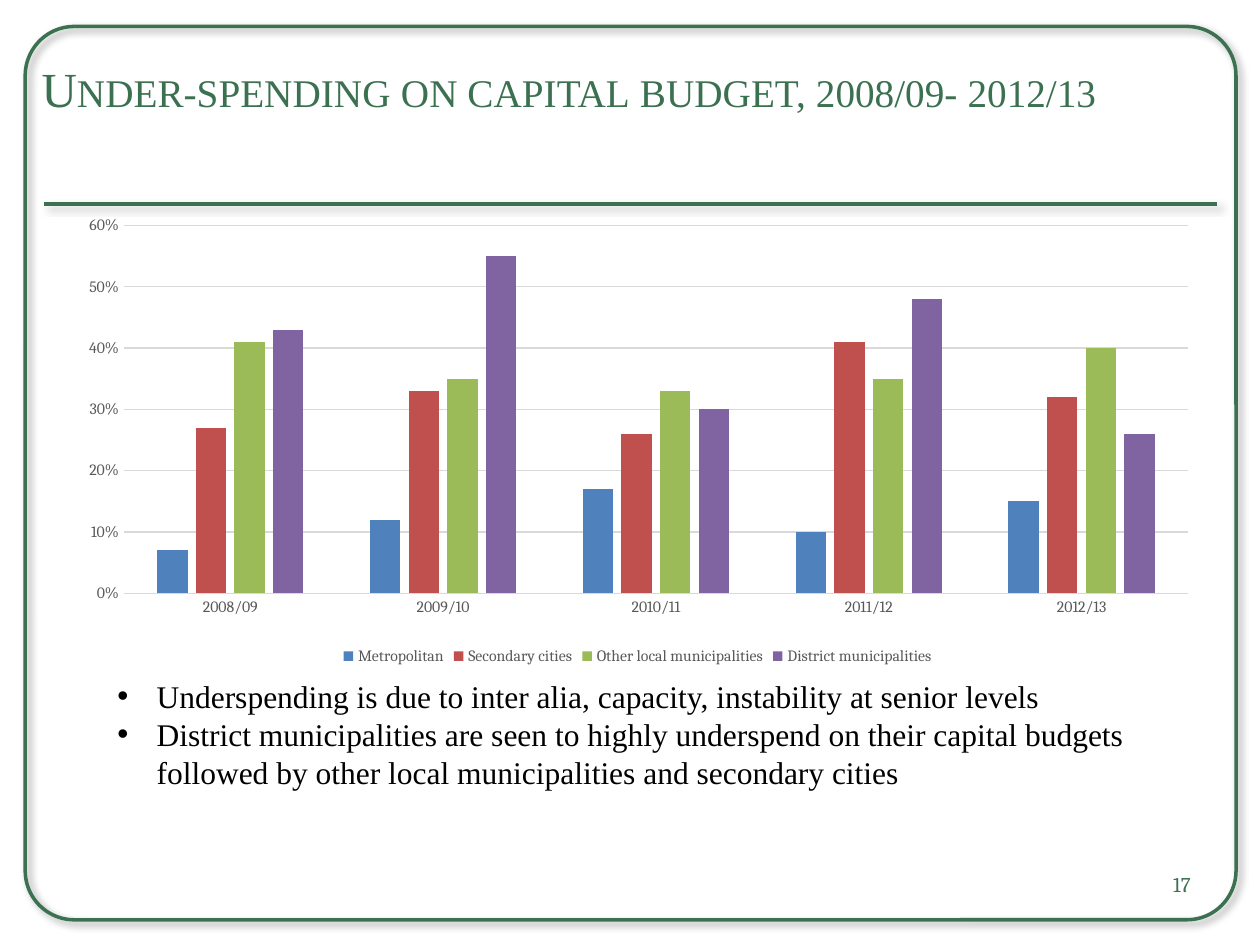
from dataclasses import dataclass

from lxml.etree import SubElement
from pptx import Presentation
from pptx.chart.data import CategoryChartData
from pptx.dml.color import RGBColor
from pptx.enum.chart import XL_CHART_TYPE as ChartType, XL_LEGEND_POSITION as LegendPosition
from pptx.enum.chart import XL_TICK_MARK as TickMark
from pptx.enum.shapes import MSO_CONNECTOR as Connector, MSO_SHAPE as Shape
from pptx.enum.text import MSO_ANCHOR as Anchor, MSO_AUTO_SIZE as AutoSize, PP_ALIGN as Align
from pptx.oxml import parse_xml
from pptx.oxml.ns import nsdecls, qn
from pptx.util import Pt


@dataclass(frozen=True)
class Theme:
    """Colours, fonts and type sizes of the slide."""
    green: str = "3B7150"
    ink: str = "000000"
    grey: str = "595959"
    grid: str = "D9D9D9"
    series: tuple = ("4F81BD", "C0504D", "9BBB59", "8064A2")
    serif: str = "Times New Roman"
    chart_font: str = "Cambria"
    title_size: float = 28
    body_size: float = 18
    body_leading: float = 21.7
    number_size: float = 12
    label_size: float = 9
    chart_size: float = 10
    frame_line: float = 2
    chart_line: float = 0.75


THEME = Theme()
CATEGORIES = ("2008/09", "2009/10", "2010/11", "2011/12", "2012/13")
UNDERSPENDING = {
    "Metropolitan": (0.07, 0.12, 0.17, 0.1, 0.15),
    "Secondary cities": (0.27, 0.33, 0.26, 0.41, 0.32),
    "Other local municipalities": (0.41, 0.35, 0.33, 0.35, 0.4),
    "District municipalities": (0.43, 0.55, 0.3, 0.48, 0.26),
}
BULLETS = (
    "Underspending is due to inter alia, capacity, instability at senior levels",
    "District municipalities are seen to highly underspend on their capital budgets "
    "followed by other local municipalities and secondary cities",
)


def place(shape, box):
    """Move a shape to a box of left, top, width and height in points."""
    shape.left, shape.top, shape.width, shape.height = map(Pt, box)


def style_font(font, name, size, color):
    """Set the typeface, size and colour of a font."""
    font.name, font.size = name, Pt(size)
    font.color.rgb = RGBColor.from_string(color)


def style_line(line, color, width):
    """Set the colour and width of a line."""
    line.color.rgb = RGBColor.from_string(color)
    line.width = Pt(width)


def add_shadow(shape):
    """Give a shape a soft shadow to the lower right."""
    shape._element.spPr.append(parse_xml(
        f'<a:effectLst {nsdecls("a")}><a:outerShdw blurRad="{Pt(4)}" dist="{Pt(3)}" '
        f'dir="2700000" algn="tl" rotWithShape="0"><a:srgbClr val="{THEME.ink}">'
        '<a:alpha val="40000"/></a:srgbClr></a:outerShdw></a:effectLst>'))


def add_frame(slide, box, rule_top, rule_inset):
    """Draw the rounded border and the rule under the title."""
    left, top, width, height = box
    border = slide.shapes.add_shape(Shape.ROUNDED_RECTANGLE, *map(Pt, box))
    border.adjustments[0] = 0.055
    border.fill.background()
    rule = slide.shapes.add_connector(
        Connector.STRAIGHT, Pt(left + rule_inset), Pt(rule_top),
        Pt(left + width - rule_inset), Pt(rule_top))
    for shape in (border, rule):
        style_line(shape.line, THEME.green, THEME.frame_line)
        add_shadow(shape)


def fill_title(slide, box, text):
    """Write the title in small capitals near the top of its box."""
    title = slide.shapes.title
    place(title, box)
    frame = title.text_frame
    frame.auto_size, frame.word_wrap = AutoSize.NONE, True
    frame.vertical_anchor = Anchor.TOP
    frame.margin_left = frame.margin_right = Pt(3.6)
    frame.margin_top = Pt(12.6)
    paragraph = frame.paragraphs[0]
    paragraph.alignment = Align.LEFT
    run = paragraph.add_run()
    run.text = text
    style_font(run.font, THEME.serif, THEME.title_size, THEME.green)
    run.font._element.set("cap", "small")


def fill_body(slide, box, lines):
    """Write the bullet list in the body placeholder."""
    body = slide.placeholders[1]
    place(body, box)
    frame = body.text_frame
    frame.auto_size, frame.word_wrap = AutoSize.NONE, True
    for index, line in enumerate(lines):
        paragraph = frame.add_paragraph() if index else frame.paragraphs[0]
        properties = paragraph._element.get_or_add_pPr()
        properties.set("marL", str(Pt(22.5)))
        properties.set("indent", str(Pt(-22.5)))
        SubElement(properties, qn("a:buFont"), typeface="Arial")
        SubElement(properties, qn("a:buChar"), char="•")
        paragraph.space_before = Pt(0)
        paragraph.line_spacing = Pt(THEME.body_leading)
        run = paragraph.add_run()
        run.text = line
        style_font(run.font, THEME.serif, THEME.body_size, THEME.ink)


def add_spending_chart(slide, box):
    """Add the clustered columns of under-spending by municipality type."""
    data = CategoryChartData(number_format="0%")
    data.categories = CATEGORIES
    for name, values in UNDERSPENDING.items():
        data.add_series(name, values)
    chart = slide.shapes.add_chart(ChartType.COLUMN_CLUSTERED, *map(Pt, box), data).chart
    style_font(chart.font, THEME.chart_font, THEME.chart_size, THEME.ink)
    chart.has_title = False
    chart.has_legend = True
    chart.legend.position = LegendPosition.BOTTOM
    chart.legend.include_in_layout = False
    style_font(chart.legend.font, THEME.chart_font, THEME.label_size, THEME.grey)

    plot = chart.plots[0]
    plot.gap_width, plot.overlap, plot.vary_by_categories = 219, -27, False
    for series, color in zip(plot.series, THEME.series):
        series.format.fill.solid()
        series.format.fill.fore_color.rgb = RGBColor.from_string(color)

    category_axis, value_axis = chart.category_axis, chart.value_axis
    for axis in (category_axis, value_axis):
        axis.major_tick_mark = axis.minor_tick_mark = TickMark.NONE
        style_font(axis.tick_labels.font, THEME.chart_font, THEME.label_size, THEME.grey)
    style_line(category_axis.format.line, THEME.grid, THEME.chart_line)
    value_axis.format.line.fill.background()
    value_axis.minimum_scale, value_axis.maximum_scale, value_axis.major_unit = 0, 0.6, 0.1
    value_axis.tick_labels.number_format = "0%"
    value_axis.tick_labels.number_format_is_linked = False
    value_axis.has_major_gridlines = True
    style_line(value_axis.major_gridlines.format.line, THEME.grid, THEME.chart_line)
    set_plot_area(chart, x=0.056, y=0.041, w=0.92, h=0.793)


def set_plot_area(chart, **fractions):
    """Fix the inner plot area as fractions of the chart."""
    area = chart._chartSpace.chart.plotArea
    for layout in area.findall(qn("c:layout")):
        area.remove(layout)
    modes = "".join(f'<c:{key}Mode val="edge"/>' for key in "xy")
    sizes = "".join(f'<c:{key} val="{value}"/>' for key, value in fractions.items())
    area.insert(0, parse_xml(
        f'<c:layout {nsdecls("c")}><c:manualLayout><c:layoutTarget val="inner"/>'
        f'{modes}{sizes}</c:manualLayout></c:layout>'))


def add_page_number(slide, box, number):
    """Write the page number at the right of its box."""
    frame = slide.shapes.add_textbox(*map(Pt, box)).text_frame
    frame.word_wrap, frame.vertical_anchor = True, Anchor.MIDDLE
    frame.margin_left = frame.margin_right = Pt(3.6)
    paragraph = frame.paragraphs[0]
    paragraph.alignment = Align.RIGHT
    run = paragraph.add_run()
    run.text = number
    style_font(run.font, THEME.chart_font, THEME.number_size, THEME.green)


def main():
    """Build the slide and save it."""
    presentation = Presentation()
    presentation.slide_width, presentation.slide_height = Pt(720), Pt(540)
    slide = presentation.slides.add_slide(presentation.slide_layouts[1])
    add_frame(slide, (14.4, 15.1, 691.9, 510.5), rule_top=116.6, rule_inset=11)
    fill_title(slide, (20.2, 20.9, 680.4, 90),
               "Under-spending on capital budget, 2008/09- 2012/13")
    add_page_number(slide, (516.2, 491, 167.8, 28.8), "17")
    fill_body(slide, (59.8, 383, 635.8, 72.7), BULLETS)
    add_spending_chart(slide, (33.8, 118.1, 661, 265))
    presentation.save("out.pptx")


if __name__ == "__main__":
    main()
